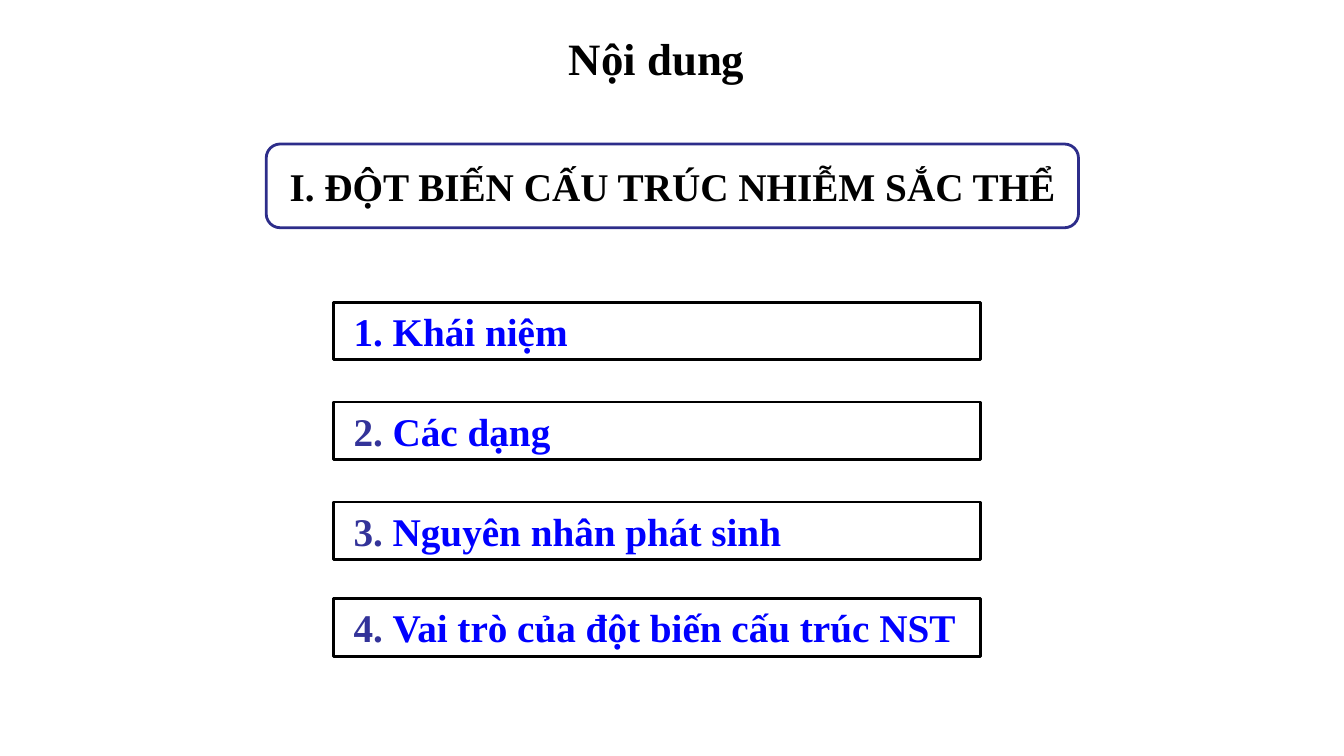
import pptx
import pptx.util
import pptx.dml.color
import pptx.enum.shapes
import pptx.enum.text

Cm = pptx.util.Cm
Pt = pptx.util.Pt
RGBColor = pptx.dml.color.RGBColor
MSO_SHAPE = pptx.enum.shapes.MSO_SHAPE
PP_ALIGN = pptx.enum.text.PP_ALIGN
MSO_ANCHOR = pptx.enum.text.MSO_ANCHOR

BLACK = RGBColor(0x00, 0x00, 0x00)
WHITE = RGBColor(0xFF, 0xFF, 0xFF)
NAVY = RGBColor(0x2D, 0x2D, 0x8A)
INDIGO = RGBColor(0x33, 0x33, 0x99)
BLUE = RGBColor(0x00, 0x00, 0xFF)


class Deck:
    font = {"name": "Times New Roman", "bold": True}

    def __init__(self, prs):
        self.s = prs.slides.add_slide(prs.slide_layouts[6])

    def add_text(self, sp, runs, size, align, **frame):
        tf = sp.text_frame
        for key, value in {"word_wrap": True, **frame}.items():
            setattr(tf, key, value)
        p = tf.paragraphs[0]
        p.alignment = align
        for text, color in runs:
            r = p.add_run()
            r.text = text
            for key, value in {**self.font, "size": Pt(size)}.items():
                setattr(r.font, key, value)
            r.font.color.rgb = color

    def title(self, text, box):
        sp = self.s.shapes.add_textbox(*map(Cm, box))
        self.add_text(sp, [(text, BLACK)], 32, PP_ALIGN.CENTER)

    def panel(self, kind, box, line):
        sp = self.s.shapes.add_shape(kind, *map(Cm, box))
        sp.shadow.inherit = False
        sp.fill.solid()
        sp.fill.fore_color.rgb = WHITE
        sp.line.color.rgb = line
        sp.line.width = Pt(2)
        return sp

    def banner(self, text, box):
        sp = self.panel(MSO_SHAPE.ROUNDED_RECTANGLE, box, NAVY)
        self.add_text(sp, [(text, BLACK)], 28, PP_ALIGN.CENTER,
                      vertical_anchor=MSO_ANCHOR.MIDDLE)

    def item(self, runs, top):
        sp = self.panel(MSO_SHAPE.RECTANGLE, (8.41, top, 16.31, 1.45), BLACK)
        self.add_text(sp, runs, 28, PP_ALIGN.LEFT,
                      vertical_anchor=MSO_ANCHOR.TOP, margin_left=Cm(0.5))


def main():
    prs = pptx.Presentation()
    prs.slide_width, prs.slide_height = Cm(33.87), Cm(19.05)
    deck = Deck(prs)
    deck.title("Nội dung", (12.12, 0.64, 8.86, 1.63))
    deck.banner("I. ĐỘT BIẾN CẤU TRÚC NHIỄM SẮC THỂ", (6.71, 3.63, 20.47, 2.11))
    topics = [
        ("Khái niệm", BLUE, 7.62),
        ("Các dạng", INDIGO, 10.13),
        ("Nguyên nhân phát sinh", INDIGO, 12.65),
        ("Vai trò của đột biến cấu trúc NST", INDIGO, 15.09),
    ]
    for number, (topic, color, top) in enumerate(topics, 1):
        deck.item([(f"{number}. ", color), (topic, BLUE)], top)
    prs.save("out.pptx")


if __name__ == "__main__":
    main()
